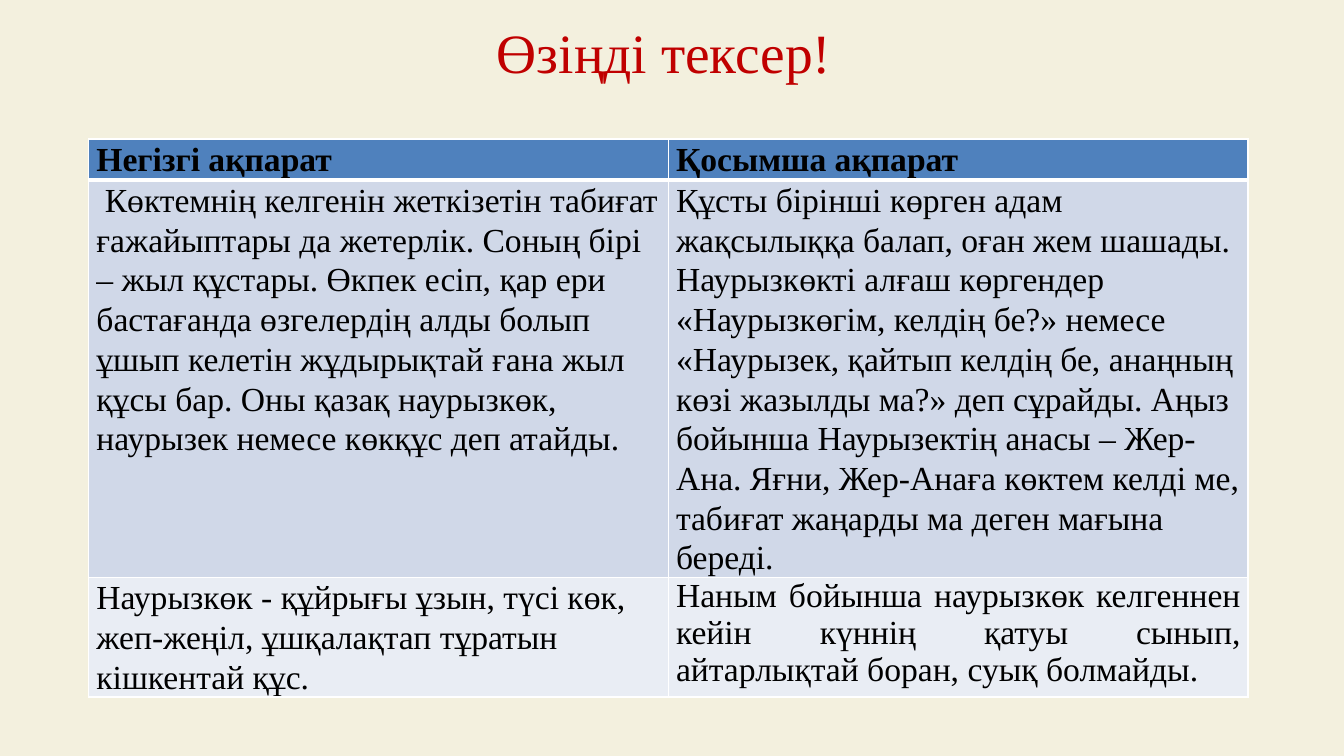
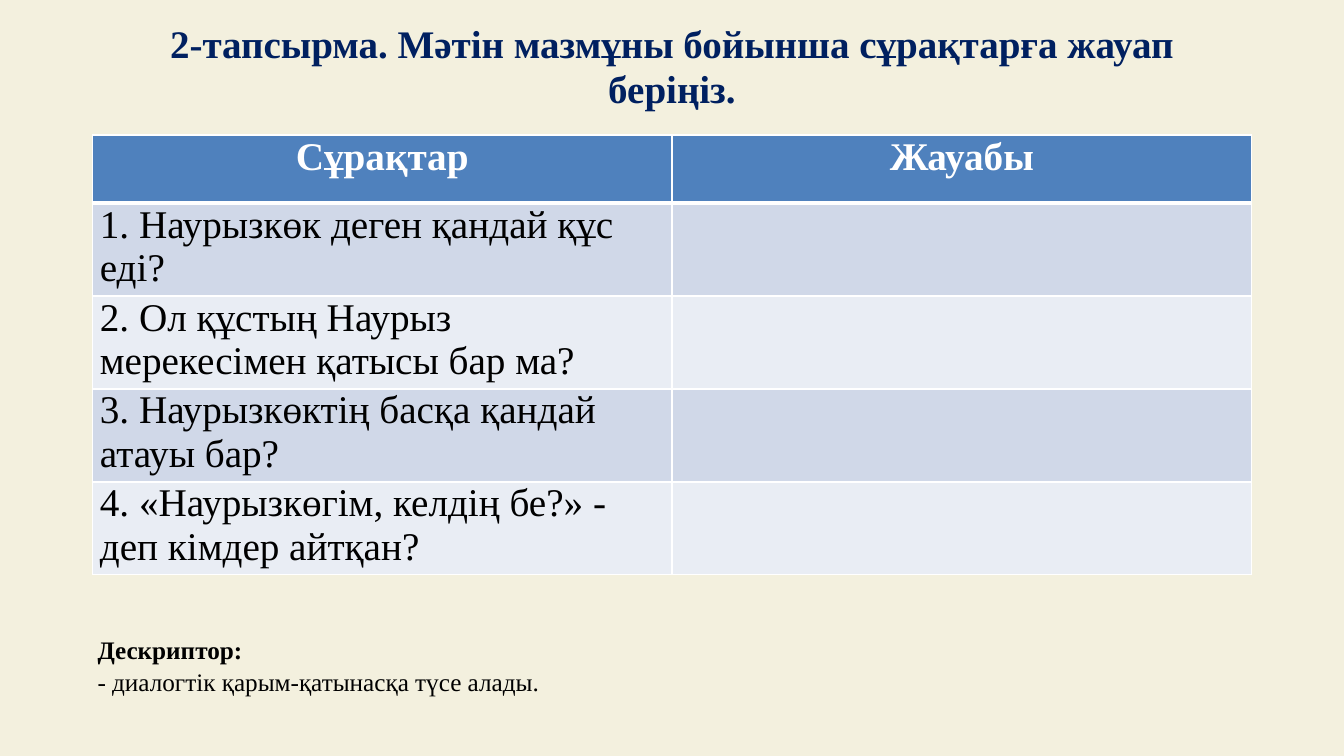
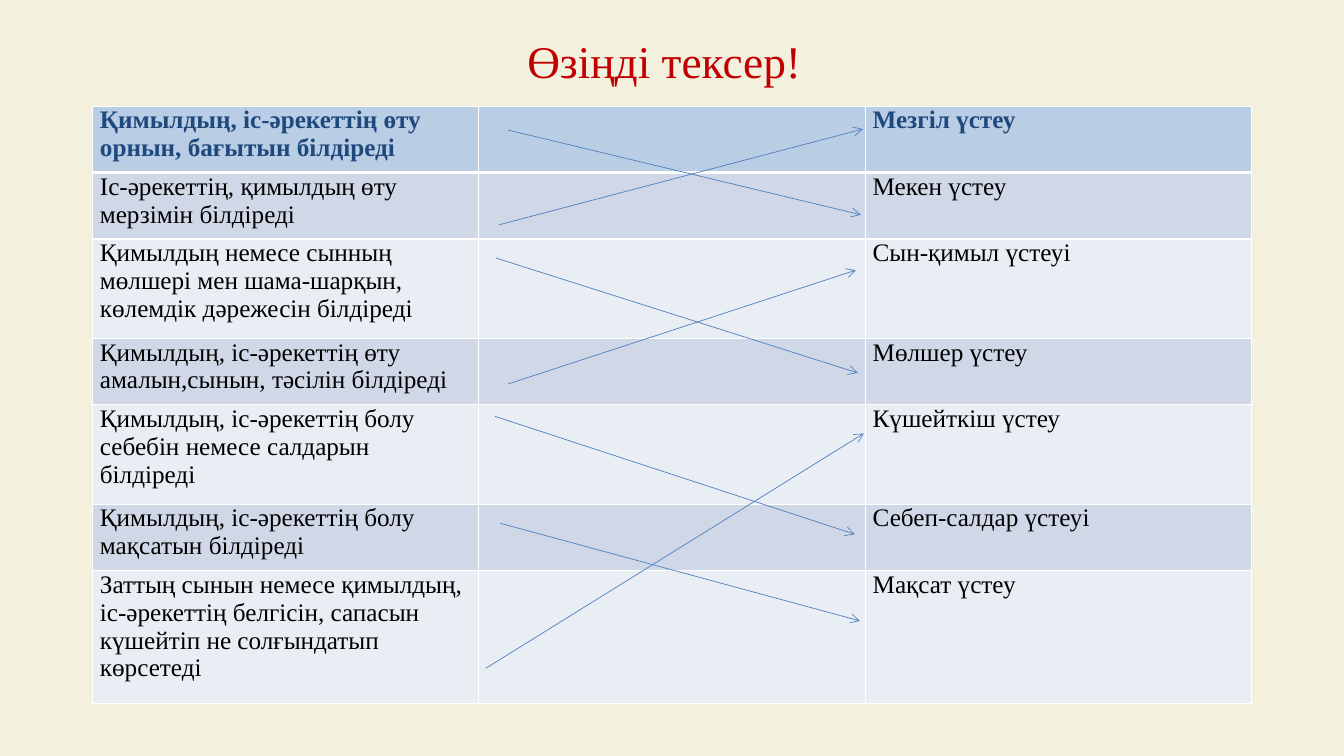
from dataclasses import dataclass
from typing import Optional

from lxml.etree import SubElement
from pptx import Presentation
from pptx.dml.color import RGBColor
from pptx.enum.shapes import MSO_CONNECTOR as Connector
from pptx.enum.text import MSO_ANCHOR as Anchor, MSO_AUTO_SIZE as AutoSize, PP_ALIGN as Align
from pptx.oxml.ns import qn
from pptx.util import Pt

# Shared look
FONT = "Times New Roman"
CREAM = RGBColor(0xF3, 0xF0, 0xDE)
RED = RGBColor(0xC0, 0x00, 0x00)
NAVY = RGBColor(0x00, 0x20, 0x60)
DARK_BLUE = RGBColor(0x1F, 0x49, 0x7D)
BLUE = RGBColor(0x4F, 0x81, 0xBD)
PALE_BLUE = RGBColor(0xB9, 0xCD, 0xE5)
BAND_DARK = RGBColor(0xD0, 0xD8, 0xE8)
BAND_LIGHT = RGBColor(0xE9, 0xED, 0xF4)
BLACK = RGBColor(0, 0, 0)
WHITE = RGBColor(0xFF, 0xFF, 0xFF)
TITLE_WIDTH, TITLE_HEIGHT = 828, 66
TABLE_WIDTH = 828
CELL_MARGIN = 5.4


@dataclass
class Title:
    text: str
    size: float
    color: RGBColor
    middle: float
    left: float = 60.5
    bold: bool = False
    line_spacing: float = 0.9


@dataclass
class TableLook:
    left: float
    top: float
    heights: list[float]
    size: float
    header_fill: RGBColor
    header_color: RGBColor
    header_align: Align = Align.LEFT
    line_spacing: Optional[float] = None


@dataclass
class Arrow:
    start: tuple[float, float]
    end: tuple[float, float]


def add_run(para, text: str, size: float, color: RGBColor, bold: bool = False) -> None:
    run = para.add_run()
    run.text = text
    run.font.name = FONT
    run.font.size = Pt(size)
    run.font.bold = bold
    run.font.color.rgb = color


def add_page(deck, title: Title):
    page = deck.slides.add_slide(deck.slide_layouts[5])
    box = page.shapes.title
    box.left, box.top = Pt(title.left), Pt(title.middle - TITLE_HEIGHT / 2)
    box.width, box.height = Pt(TITLE_WIDTH), Pt(TITLE_HEIGHT)
    frame = box.text_frame
    frame.auto_size = AutoSize.NONE
    frame.word_wrap = True
    frame.vertical_anchor = Anchor.MIDDLE
    para = frame.paragraphs[0]
    para.alignment = Align.CENTER
    para.line_spacing = title.line_spacing
    add_run(para, title.text, title.size, title.color, title.bold)
    return page


def set_borders(cell, is_header: bool) -> None:
    props = cell._tc.get_or_add_tcPr()
    for side in ("lnL", "lnR", "lnT", "lnB"):
        width = 3 if is_header and side == "lnB" else 1
        line = SubElement(props, qn(f"a:{side}"), w=str(Pt(width)))
        fill = SubElement(line, qn("a:solidFill"))
        SubElement(fill, qn("a:srgbClr"), val=str(WHITE))


def add_table(page, look: TableLook, rows: list[tuple[str, ...]]):
    columns = len(rows[0])
    table = page.shapes.add_table(
        len(rows), columns, Pt(look.left), Pt(look.top),
        Pt(TABLE_WIDTH), Pt(sum(look.heights))).table
    for column in table.columns:
        column.width = Pt(TABLE_WIDTH / columns)
    for index, (texts, height) in enumerate(zip(rows, look.heights)):
        table.rows[index].height = Pt(height)
        is_header = index == 0
        band = BAND_DARK if index % 2 else BAND_LIGHT
        for position, text in enumerate(texts):
            cell = table.cell(index, position)
            cell.margin_left = cell.margin_right = Pt(CELL_MARGIN)
            cell.margin_top = cell.margin_bottom = 0
            set_borders(cell, is_header)
            cell.fill.solid()
            cell.fill.fore_color.rgb = look.header_fill if is_header else band
            if not text:
                continue
            para = cell.text_frame.paragraphs[0]
            para.alignment = look.header_align if is_header else Align.LEFT
            para.line_spacing = look.line_spacing
            add_run(para, text, look.size, look.header_color if is_header else BLACK, is_header)
    return table


def add_arrow(page, arrow: Arrow) -> None:
    line = page.shapes.add_connector(
        Connector.STRAIGHT, *(Pt(value) for value in arrow.start + arrow.end))
    line.line.color.rgb = BLUE
    line.line.width = Pt(0.5)
    SubElement(line.line._get_or_add_ln(), qn("a:tailEnd"), type="arrow")
    SubElement(line._element.spPr, qn("a:effectLst"))


def build_information_page(deck) -> None:
    page = add_page(deck, Title("Өзіңді тексер!", 39.6, RED, middle=40))
    look = TableLook(63.5, 99.3, [29.25, 283.5, 85.5], 24, BLUE, BLACK, line_spacing=1.07)
    table = add_table(page, look, [
        ("Негізгі ақпарат", "Қосымша ақпарат"),
        ("Көктемнің келгенін жеткізетін табиғат ғажайыптары да жетерлік. Соның бірі – жыл "
         "құстары. Өкпек есіп, қар ери бастағанда өзгелердің алды болып ұшып келетін "
         "жұдырықтай ғана жыл құсы бар. Оны қазақ наурызкөк, наурызек немесе көкқұс деп "
         "атайды.",
         "Құсты бірінші көрген адам жақсылыққа балап, оған жем шашады. Наурызкөкті алғаш "
         "көргендер «Наурызкөгім, келдің бе?» немесе «Наурызек, қайтып келдің бе, анаңның "
         "көзі жазылды ма?» деп сұрайды. Аңыз бойынша Наурызектің анасы – Жер-Ана. Яғни, "
         "Жер-Анаға көктем келді ме, табиғат жаңарды ма деген мағына береді."),
        ("Наурызкөк - құйрығы ұзын, түсі көк, жеп-жеңіл, ұшқалақтап тұратын кішкентай құс.",
         "Наным бойынша наурызкөк келгеннен кейін күннің қатуы сынып, айтарлықтай боран, "
         "суық болмайды."),
    ])
    # First-line indent of the long text, justified closing cell
    table.cell(1, 0).text_frame.paragraphs[0]._p.get_or_add_pPr().set("indent", str(Pt(6)))
    closing = table.cell(2, 1).text_frame.paragraphs[0]
    closing.alignment = Align.JUSTIFY
    closing.line_spacing = 1.0


def build_question_page(deck) -> None:
    page = add_page(deck, Title(
        "2-тапсырма. Мәтін мазмұны бойынша сұрақтарға жауап беріңіз.", 27.9, NAVY,
        middle=48, left=66, bold=True, line_spacing=0.97))
    look = TableLook(66, 96.5, [48.6] + [66.4] * 4, 28, BLUE, WHITE, Align.CENTER)
    add_table(page, look, [
        ("Сұрақтар", "Жауабы"),
        ("1. Наурызкөк деген қандай құс еді?", ""),
        ("2. Ол құстың Наурыз мерекесімен қатысы бар ма?", ""),
        ("3. Наурызкөктің басқа қандай атауы бар?", ""),
        ("4. «Наурызкөгім, келдің бе?» - деп кімдер айтқан?", ""),
    ])
    # Descriptor
    frame = page.shapes.add_textbox(Pt(62.6), Pt(447.8), Pt(657.4), Pt(51)).text_frame
    frame.word_wrap = True
    lines = [("Дескриптор:", True), ("- диалогтік қарым-қатынасқа түсе алады.", False)]
    for index, (text, bold) in enumerate(lines):
        para = frame.add_paragraph() if index else frame.paragraphs[0]
        para.line_spacing = 1.07
        add_run(para, text, 18, BLACK, bold)


def build_matching_page(deck) -> None:
    page = add_page(deck, Title("Өзіңді тексер!", 32.4, RED, middle=45.5))
    heights = [47.4 if lines == 2 else 23.7 * lines for lines in (2, 2, 3, 2, 3, 2, 4)]
    look = TableLook(66, 75.9, heights, 18, PALE_BLUE, DARK_BLUE)
    add_table(page, look, [
        ("Қимылдың, іс-әрекеттің өту орнын, бағытын білдіреді", "", "Мезгіл үстеу"),
        ("Іс-әрекеттің, қимылдың өту мерзімін білдіреді", "", "Мекен үстеу"),
        ("Қимылдың немесе сынның мөлшері мен шама-шарқын, көлемдік дәрежесін білдіреді",
         "", "Сын-қимыл үстеуі"),
        ("Қимылдың, іс-әрекеттің өту амалын,сынын, тәсілін білдіреді", "", "Мөлшер үстеу"),
        ("Қимылдың, іс-әрекеттің болу себебін немесе салдарын білдіреді",
         "", "Күшейткіш үстеу"),
        ("Қимылдың, іс-әрекеттің болу мақсатын білдіреді", "", "Себеп-салдар үстеуі"),
        ("Заттың сынын немесе қимылдың, іс-әрекеттің белгісін, сапасын күшейтіп не "
         "солғындатып көрсетеді", "", "Мақсат үстеу"),
    ])
    # Arrows from each meaning to its adverb
    for arrow in (
        Arrow((362.9, 92.9), (614.9, 153.4)),
        Arrow((356.4, 160.6), (616.3, 92.2)),
        Arrow((354.2, 184.3), (612.7, 266.4)),
        Arrow((362.9, 274.3), (611.3, 193)),
        Arrow((347, 477.4), (617, 309.6)),
        Arrow((353.5, 297.4), (610.6, 381.6)),
        Arrow((357.1, 373.7), (614.2, 443.5)),
    ):
        add_arrow(page, arrow)


def main() -> None:
    deck = Presentation()
    deck.slide_width, deck.slide_height = Pt(960), Pt(540)
    background = deck.slide_master.background.fill
    background.solid()
    background.fore_color.rgb = CREAM
    build_information_page(deck)
    build_question_page(deck)
    build_matching_page(deck)
    deck.save("out.pptx")


if __name__ == "__main__":
    main()
